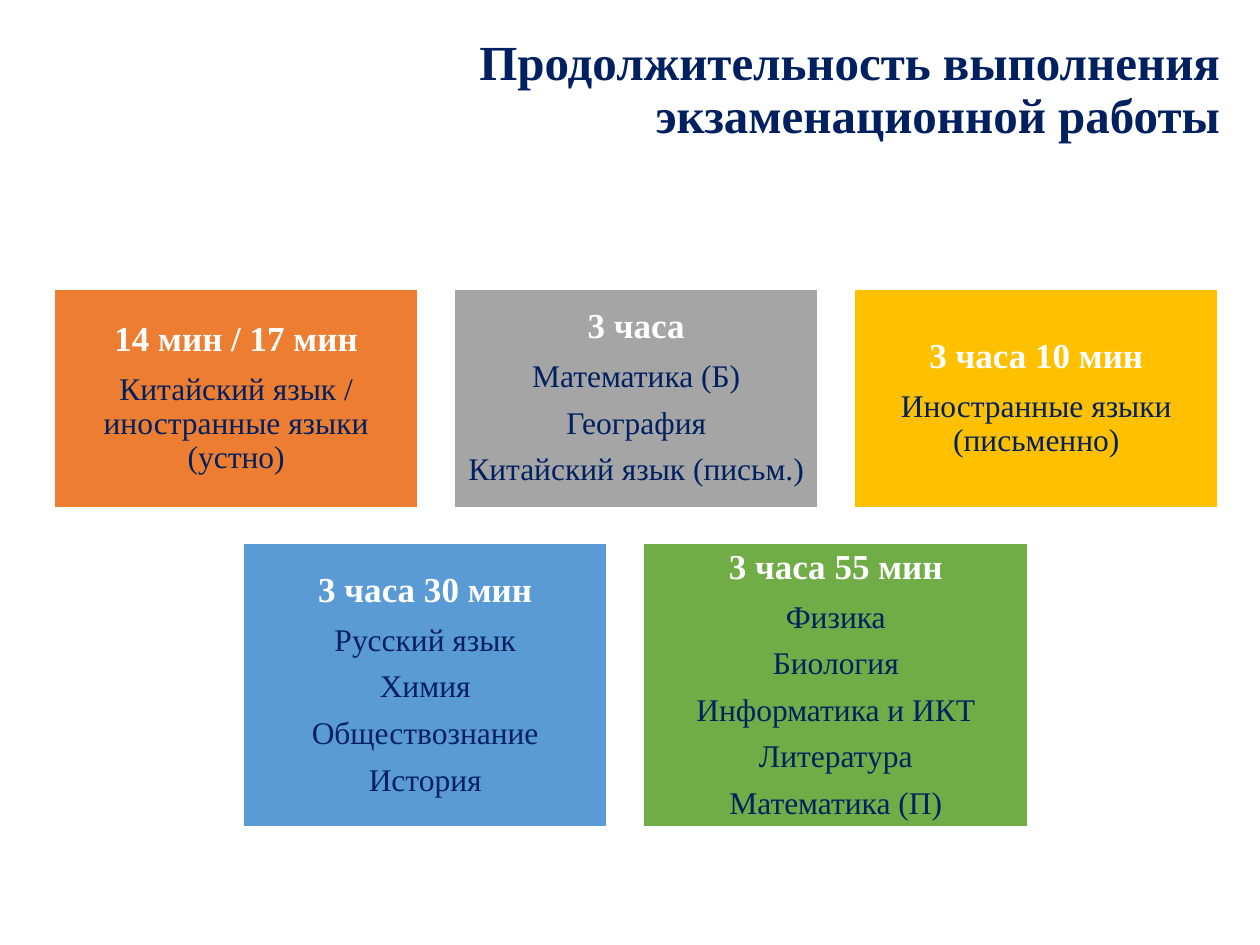
"""Builds a slide with exam durations grouped by subject."""
import pptx
import pptx.dml.color
import pptx.enum.shapes
import pptx.enum.text
import pptx.util

Pt = pptx.util.Pt
ALIGN = pptx.enum.text.PP_ALIGN
COLORS = {"navy": "002060", "white": "FFFFFF", "orange": "ED7D31", "gray": "A5A5A5",
          "gold": "FFC000", "blue": "5B9BD5", "green": "70AD47"}
TITLE = {"size": Pt(28), "bold": True, "color": "navy"}
DURATION = {"size": Pt(20), "bold": True, "color": "white"}
SUBJECT = {"size": Pt(18), "bold": False, "color": "navy"}
PITCH = 228.6
ROWS = [
    (31, 165, 125, [
        ("orange", 208, "14 мин / 17 мин", ["Китайский язык / иностранные языки (устно)"]),
        ("gray", 208, "3 часа", ["Математика (Б)", "География", "Китайский язык (письм.)"]),
        ("gold", 208, "3 часа 10 мин", ["Иностранные языки (письменно)"]),
    ]),
    (139, 310.5, 162, [
        ("blue", 208, "3 часа 30 мин", ["Русский язык", "Химия", "Обществознание", "История"]),
        ("green", 220, "3 часа 55 мин", ["Физика", "Биология", "Информатика и ИКТ",
                                         "Литература", "Математика (П)"]),
    ]),
]


def rgb(name):
    return pptx.dml.color.RGBColor.from_string(COLORS[name])


def set_attrs(obj, values):
    for name, value in values.items():
        setattr(obj, name, value)


def add_line(p, text, style, align, after=0):
    set_attrs(p, {"alignment": align, "line_spacing": 0.9, "space_after": Pt(after)})
    r = p.add_run()
    r.text = text
    set_attrs(r.font, {"name": "Times New Roman", "size": style["size"], "bold": style["bold"]})
    r.font.color.rgb = rgb(style["color"])


def setup_frame(sp, inset_x, inset_y):
    tf = sp.text_frame
    set_attrs(tf, {"word_wrap": True, "vertical_anchor": pptx.enum.text.MSO_ANCHOR.MIDDLE,
                   "margin_left": Pt(inset_x), "margin_right": Pt(inset_x),
                   "margin_top": Pt(inset_y), "margin_bottom": Pt(inset_y)})
    return tf


def add_title(s, text):
    sp = s.shapes.add_textbox(Pt(83.5), Pt(0), Pt(620.6), Pt(104.4))
    tf = setup_frame(sp, 7.2, 3.6)
    add_line(tf.paragraphs[0], text, TITLE, ALIGN.RIGHT)


def add_card(s, left, top, width, height, fill, duration, subjects):
    sp = s.shapes.add_shape(pptx.enum.shapes.MSO_SHAPE.RECTANGLE,
                            Pt(left), Pt(top), Pt(width), Pt(height))
    sp.shadow.inherit = False
    sp.fill.solid()
    sp.fill.fore_color.rgb = rgb(fill)
    sp.line.color.rgb = rgb("white")
    sp.line.width = Pt(1)
    tf = setup_frame(sp, 6, 6)
    add_line(tf.paragraphs[0], duration, DURATION, ALIGN.CENTER, 8)
    for subject in subjects:
        add_line(tf.add_paragraph(), subject, SUBJECT, ALIGN.CENTER, 7.2)


def main():
    prs = pptx.Presentation()
    set_attrs(prs, {"slide_width": Pt(720), "slide_height": Pt(540)})
    s = prs.slides.add_slide(prs.slide_layouts[6])
    add_title(s, "Продолжительность выполнения экзаменационной работы")
    for left, top, height, cards in ROWS:
        for i, (fill, width, duration, subjects) in enumerate(cards):
            add_card(s, left + i * PITCH, top, width, height, fill, duration, subjects)
    prs.save("out.pptx")


if __name__ == "__main__":
    main()
